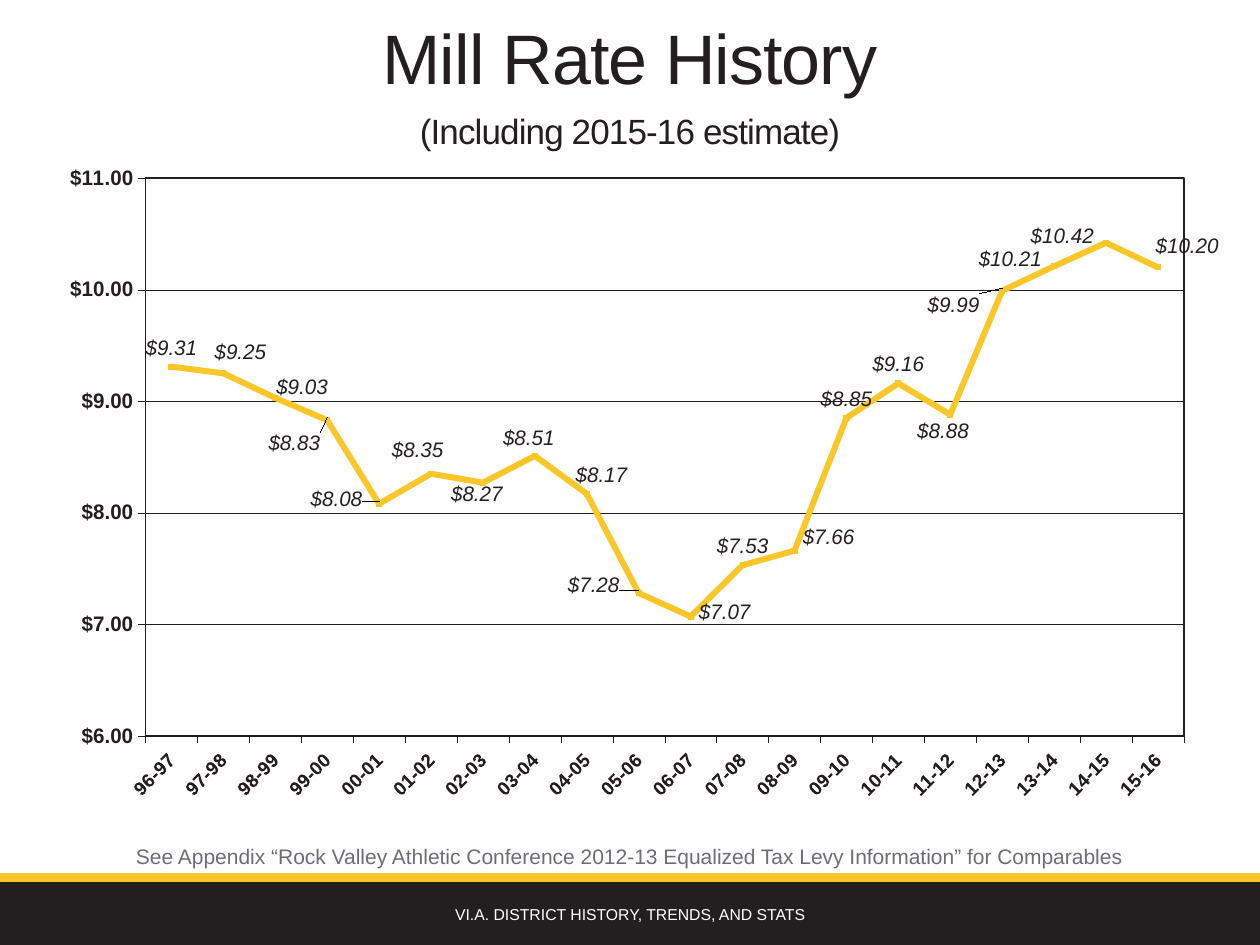
from lxml import etree
from pptx import Presentation
from pptx import util as u
from pptx.chart.data import CategoryChartData
from pptx.dml.color import RGBColor
from pptx.enum import chart as ch, shapes, text
from pptx.oxml import parse_xml
from pptx.oxml.ns import nsdecls, qn

DARK, GOLD, GRAY, WHITE = "231F20", "FAC628", "6D6E71", "FFFFFF"
FONT = "Arial"
DOLLARS = r"\$#,##0.00"
FIRST_YEAR = 1996
RATES = [9.31, 9.25, 9.03, 8.83, 8.08, 8.35, 8.27, 8.51, 8.17, 7.28,
         7.07, 7.53, 7.66, 8.85, 9.16, 8.88, 9.99, 10.21, 10.42, 10.2]

# Label shifts from "above the point", in percent of chart width and height
LABEL_SHIFTS = {
    1: (1.4, -0.3), 2: (2.2, 1.1), 3: (-2.7, 5.9), 4: (-3.5, 2),
    5: (-1.1, -0.6), 6: (-0.5, 4.3), 7: (-0.5, 0.1), 8: (1.2, 0.1),
    9: (-3.7, 1.5), 10: (2.8, 2), 12: (2.8, 0.7), 15: (-0.6, 4.9),
    16: (-4, 4.6), 17: (-3.6, 1.7), 18: (-3.6, 1.7), 19: (2.4, -0.3),
}


def color(hex_string):
    return RGBColor.from_string(hex_string)


def set_font(font, size, hex_string, bold=False, italic=False):
    font.name, font.size = FONT, u.Pt(size)
    font.bold, font.italic = bold, italic
    font.color.rgb = color(hex_string)


def set_line(line, hex_string, width):
    line.color.rgb = color(hex_string)
    line.width = u.Pt(width)


def add_band(slide, top, height, fill):
    sp = slide.shapes.add_shape(shapes.MSO_SHAPE.RECTANGLE, 0, u.Cm(top),
                                u.Cm(25.4), u.Cm(height))
    sp.shadow.inherit = False
    sp.fill.solid()
    sp.fill.fore_color.rgb = color(fill)
    sp.line.fill.background()


def add_text(slide, box, lines, hex_string, anchor=text.MSO_ANCHOR.TOP,
             space_after=0, line_spacing=1.0, tracking=0):
    """Add centred lines, each given as (wording, size)."""
    tf = slide.shapes.add_textbox(*map(u.Cm, box)).text_frame
    tf.word_wrap = True
    tf.vertical_anchor = anchor
    for i, (wording, size) in enumerate(lines):
        p = tf.add_paragraph() if i else tf.paragraphs[0]
        p.alignment = text.PP_ALIGN.CENTER
        p.space_after = u.Pt(space_after)
        p.line_spacing = line_spacing
        set_font(p.font, size, hex_string)
        r = p.add_run()
        r.text = wording
        if tracking:
            r.font._element.set("spc", str(tracking))


def manual_layout(x, y, w=None, h=None):
    """Return a c:layout; with a size it places the inner plot area."""
    layout = parse_xml(f"<c:layout {nsdecls('c')}><c:manualLayout/></c:layout>")
    parts = [("x", x), ("y", y)]
    if w is not None:
        parts = [("layoutTarget", "inner"), ("xMode", "edge"),
                 ("yMode", "edge"), *parts, ("w", w), ("h", h)]
    for tag, value in parts:
        etree.SubElement(layout[0], qn(f"c:{tag}")).set("val", str(value))
    return layout


def style_axis(axis, size):
    set_font(axis.tick_labels.font, size, DARK, bold=True)
    set_line(axis.format.line, DARK, 0.15)
    axis.major_tick_mark = ch.XL_TICK_MARK.OUTSIDE
    axis.minor_tick_mark = ch.XL_TICK_MARK.NONE


def style_axes(chart):
    years, rates = chart.category_axis, chart.value_axis
    style_axis(years, 11)
    years.has_major_gridlines = False
    years._element.find(qn("c:txPr")).find(qn("a:bodyPr")).set("rot", "-2700000")
    style_axis(rates, 12)
    rates.minimum_scale, rates.maximum_scale, rates.major_unit = 6, 11, 1
    rates.tick_labels.number_format = DOLLARS
    rates.tick_labels.number_format_is_linked = False
    set_line(rates.major_gridlines.format.line, DARK, 0.15)


def style_series(series):
    series.smooth = False
    set_line(series.format.line, GOLD, 3.5)
    marker = series.marker
    marker.style, marker.size = ch.XL_MARKER_STYLE.SQUARE, 3
    marker.format.fill.solid()
    marker.format.fill.fore_color.rgb = color(GOLD)
    set_line(marker.format.line, GOLD, 0.75)


def add_labels(series):
    labels = series.data_labels
    labels.show_value = True
    labels.number_format, labels.number_format_is_linked = DOLLARS, False
    labels.position = ch.XL_LABEL_POSITION.ABOVE
    set_font(labels.font, 12, DARK, italic=True)
    for i, (dx, dy) in LABEL_SHIFTS.items():
        label = series.points[i].data_label
        set_font(label.font, 12, DARK, italic=True)
        label.position = ch.XL_LABEL_POSITION.ABOVE
        idx = next(e for e in labels._element.findall(qn("c:dLbl"))
                   if e.find(qn("c:idx")).get("val") == str(i)).find(qn("c:idx"))
        idx.addnext(manual_layout(round(dx / 100, 3), round(dy / 100, 3)))


def frame_plot(chart):
    """Place the plot area and outline it."""
    area = chart._chartSpace.find(qn("c:chart")).find(qn("c:plotArea"))
    for old in area.findall(qn("c:layout")):
        area.remove(old)
    area.insert(0, manual_layout(0.137, 0.073, 0.853, 0.781))
    area.append(parse_xml(
        f"<c:spPr {nsdecls('c', 'a')}><a:noFill/><a:ln w='{u.Pt(1)}'><a:solidFill>"
        f"<a:srgbClr val='{DARK}'/></a:solidFill></a:ln></c:spPr>"))


def add_rate_chart(slide):
    data = CategoryChartData(number_format=DOLLARS)
    years = range(FIRST_YEAR, FIRST_YEAR + len(RATES))
    data.categories = [f"{y % 100:02}-{(y + 1) % 100:02}" for y in years]
    data.add_series("Series 1", RATES)
    chart = slide.shapes.add_chart(
        ch.XL_CHART_TYPE.LINE_MARKERS, u.Cm(-0.43), u.Cm(2.54),
        u.Cm(25), u.Cm(14.4), data).chart
    chart.has_title = chart.has_legend = False
    set_font(chart.font, 16, DARK, bold=True)
    chart.plots[0].vary_by_categories = False
    style_axes(chart)
    style_series(chart.series[0])
    add_labels(chart.series[0])
    frame_plot(chart)


def main():
    prs = Presentation()
    prs.slide_width, prs.slide_height = u.Cm(25.4), u.Cm(19.05)
    slide = prs.slides.add_slide(prs.slide_layouts[6])

    # Footer bands
    add_band(slide, 17.78, 1.27, DARK)
    add_band(slide, 17.6, 0.18, GOLD)

    # Title, note and chart
    add_text(slide, (0, 0.05, 25.4, 3.12),
             [("Mill Rate History", 40), ("(Including 2015-16 estimate)", 20)],
             DARK, text.MSO_ANCHOR.BOTTOM, space_after=6, tracking=-50)
    add_text(slide, (0, 16.94, 25.4, 0.71),
             [("See Appendix “Rock Valley Athletic Conference 2012-13 Equalized "
               "Tax Levy Information” for Comparables", 12)],
             GRAY, line_spacing=0.9)
    add_rate_chart(slide)

    # Footer text
    add_text(slide, (7.67, 17.93, 10.06, 1.02),
             [("VI.A. DISTRICT HISTORY, TRENDS, AND STATS", 9)],
             WHITE, text.MSO_ANCHOR.MIDDLE)

    prs.save("out.pptx")


if __name__ == "__main__":
    main()
